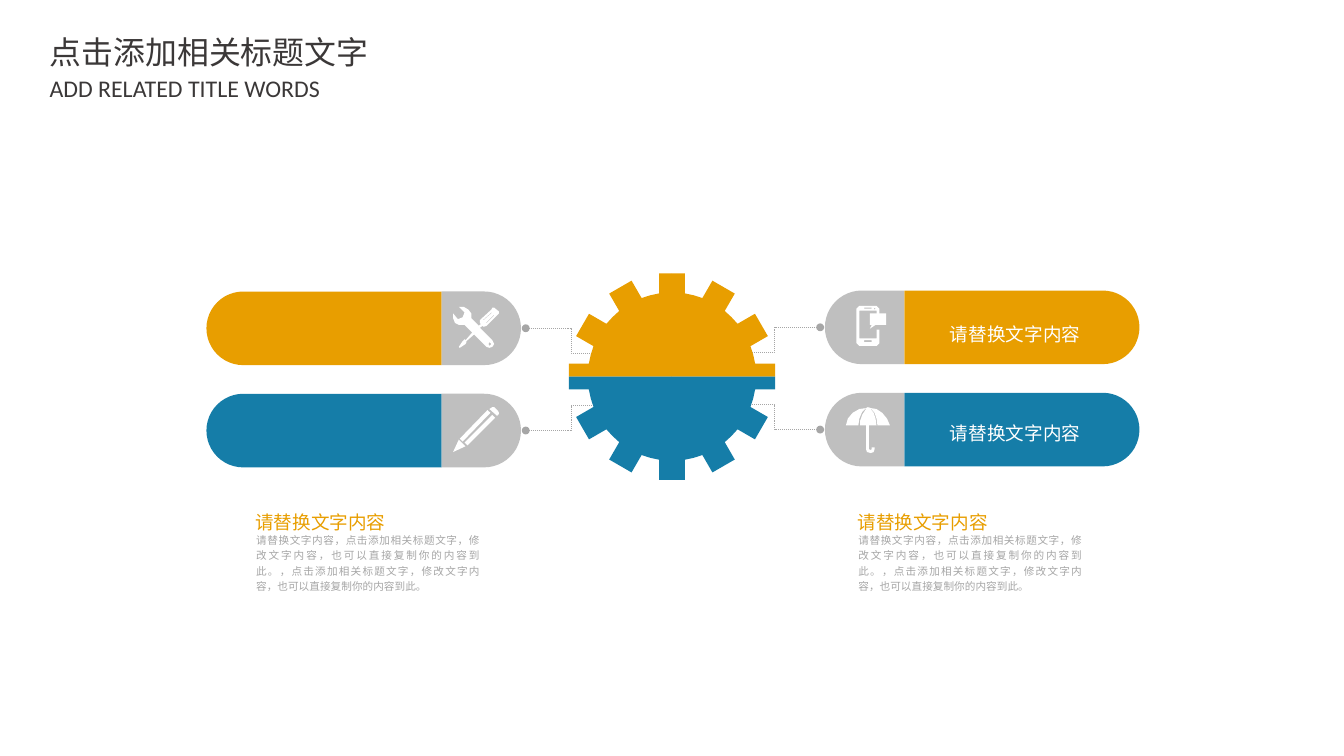
from math import cos, radians, sin

from lxml.etree import SubElement
from pptx import Presentation
from pptx.dml.color import RGBColor
from pptx.enum.dml import MSO_LINE
from pptx.enum.shapes import MSO_CONNECTOR, MSO_SHAPE
from pptx.enum.text import MSO_ANCHOR, MSO_AUTO_SIZE, PP_ALIGN as Align
from pptx.oxml.ns import qn
from pptx.util import Inches, Pt

COLOURS = {"orange": "E89E00", "blue": "157DA8", "cap": "BFBFBF", "grey": "A6A6A6",
           "white": "FFFFFF", "dark": "3B3838"}
CHINESE_FONT = "Noto Sans CJK SC"
HEADING = "请替换文字内容"
BODY = ("请替换文字内容，点击添加相关标题文字，修改文字内容，也可以直接复制你的内容到此。，"
        "点击添加相关标题文字，修改文字内容，也可以直接复制你的内容到此。")
PILL_HEIGHT, BAR_WIDTH, CAP_WIDTH = 0.77, 2.46, 0.83
PILL_STEP = 1.07
GEAR_X, GEAR_Y = 7.03, 3.94

TOOLS = [[
    [(60, 21), (55, 17), (53, 17), (52, 19), (40, 30), (40, 33), (41, 34), (39, 36), (31, 28),
     (31, 23), (28, 19), (23, 16), (18, 16), (24, 22), (22, 27), (17, 29), (12, 23), (12, 28),
     (14, 33), (18, 35), (24, 35), (32, 43), (25, 51), (24, 50), (22, 52), (18, 58), (19, 59),
     (25, 55), (26, 53), (26, 52), (34, 45), (47, 58), (50, 59), (53, 58), (55, 55), (53, 51),
     (40, 38), (43, 36), (44, 37), (47, 36), (58, 25), (60, 23)],
    [(50, 53), (52, 55), (50, 57), (49, 55)],
    [(44, 30), (43, 30), (52, 22), (53, 22)],
    [(47, 33), (46, 33), (55, 24), (55, 25)]]]
PENCIL = [
    [[(18, 48), (12, 61), (25, 55)]],
    [[(48, 17), (19, 47), (22, 50), (51, 20)]],
    [[(53, 22), (24, 51), (27, 54), (56, 25)]],
    [[(50, 16), (53, 14), (55, 14), (57, 16), (59, 18), (60, 20), (60, 21), (58, 23)]]]
PHONE = [
    [[(54, 50), (36, 50), (36, 21), (54, 21), (54, 27), (57, 27), (57, 19), (54, 16), (36, 16),
      (33, 19), (33, 55), (36, 58), (54, 58), (57, 55), (57, 41), (54, 41)],
     [(41, 18), (49, 18), (49, 19), (41, 19)],
     [(52, 18), (53, 19), (52, 20), (51, 19)],
     [(49, 54), (41, 54), (41, 52), (49, 52)]],
    [[(47, 36), (49, 36), (47, 40), (53, 36), (64, 36), (64, 24), (47, 24)]]]
UMBRELLA = [[
    [(55, 34), (68, 34), (65, 27), (60, 21), (54, 17), (48, 16), (45, 15), (43, 16), (36, 17),
     (29, 21), (24, 27), (22, 34), (35, 34), (36, 27), (39, 20), (43, 16), (43, 17), (39, 23),
     (37, 29), (37, 34), (43, 34), (43, 59), (44, 62), (48, 63), (51, 62), (52, 59), (52, 57),
     (49, 57), (49, 59), (48, 60), (46, 59), (46, 34), (54, 34), (53, 27), (51, 21), (48, 17),
     (48, 16), (52, 21), (54, 27)]]]


def paint(shape, colour):
    """Give a shape a plain fill without line or shadow."""
    shape.shadow.inherit = False
    shape.fill.solid()
    shape.fill.fore_color.rgb = RGBColor.from_string(COLOURS[colour])
    shape.line.fill.background()


def add_outline(slide, left, top, contours, colour):
    """Draw closed contours, given in inches from left and top, as one shape."""
    units = [[(round((left + x) * 1000), round((top + y) * 1000)) for x, y in contour]
             for contour in contours]
    builder = slide.shapes.build_freeform(*units[0][0], scale=Inches(1) / 1000)
    for number, contour in enumerate(units):
        if number:
            builder.move_to(*contour[0])
        builder.add_line_segments(contour[1:], close=True)
    paint(builder.convert_to_shape(), colour)


def write(shape, text, size, colour, font, align=Align.LEFT, spacing=1.0, inset=None, wrap=True):
    """Fill a text shape with one formatted paragraph."""
    frame = shape.text_frame
    frame.word_wrap = wrap
    frame.auto_size = MSO_AUTO_SIZE.NONE
    frame.vertical_anchor = MSO_ANCHOR.TOP
    if inset is not None:
        frame.margin_left = frame.margin_right = Inches(inset)
        frame.margin_top = frame.margin_bottom = Inches(inset)
    paragraph = frame.paragraphs[0]
    paragraph.alignment = align
    paragraph.line_spacing = spacing
    paragraph._element.get_or_add_pPr().set("hangingPunct", "0")
    run = paragraph.add_run()
    run.text = text
    run.font.size = Pt(size)
    run.font.name = font
    run.font.color.rgb = RGBColor.from_string(COLOURS[colour])
    SubElement(run.font._element, qn("a:ea"), typeface=CHINESE_FONT)


def add_text(slide, left, top, width, height, *content, **style):
    """Add a text box with one paragraph."""
    box = slide.shapes.add_textbox(Inches(left), Inches(top), Inches(width), Inches(height))
    write(box, *content, **style)


def add_rounded_end(slide, left, top, width, rotation, colour):
    """Add a block whose one end is fully round, turned to the side."""
    offset = (width - PILL_HEIGHT) / 2
    shape = slide.shapes.add_shape(
        MSO_SHAPE.ROUND_2_SAME_RECTANGLE, Inches(left + offset), Inches(top - offset),
        Inches(PILL_HEIGHT), Inches(width))
    shape.adjustments[0], shape.adjustments[1] = 0.5, 0
    shape.rotation = rotation
    paint(shape, colour)


def add_link(slide, cap_edge, middle, toward_gear, down):
    """Add a dotted elbow from the gear to the edge of a pill's cap."""
    end_x = cap_edge + 0.05 * toward_gear
    link = slide.shapes.add_connector(
        MSO_CONNECTOR.ELBOW, Inches(end_x + 0.95 * toward_gear), Inches(middle - 0.26 * down),
        Inches(end_x), Inches(middle))
    link.line.color.rgb = RGBColor.from_string(COLOURS["grey"])
    link.line.width = Pt(0.75)
    link.line.dash_style = MSO_LINE.ROUND_DOT
    line = link.line._get_or_add_ln()
    SubElement(line, qn("a:headEnd"), type="oval")
    SubElement(line, qn("a:tailEnd"), type="oval")
    SubElement(link._element.spPr, qn("a:effectLst"))


def add_pill(slide, left, top, on_right, down, colour, icon):
    """Add a coloured bar with a grey icon cap on the gear's side and its link."""
    cap_left = left if on_right else left + BAR_WIDTH
    bar_left = left + CAP_WIDTH if on_right else left
    cap_edge = left if on_right else left + BAR_WIDTH + CAP_WIDTH
    add_link(slide, cap_edge, top + PILL_HEIGHT / 2, -1 if on_right else 1, down)
    add_rounded_end(slide, bar_left, top, BAR_WIDTH, 90 if on_right else 270, colour)
    add_rounded_end(slide, cap_left, top, CAP_WIDTH, 270 if on_right else 90, "cap")
    for part in icon:
        contours = [[(x / 100, y / 100) for x, y in contour] for contour in part]
        add_outline(slide, cap_left, top, contours, "white")


def add_gear(slide, centre_x, centre_y, tip=1.08, root=0.87, rim=0.88, tooth_width=0.27):
    """Draw a twelve-tooth gear in quarters, orange above and blue below."""
    def point(angle, radius, shift):
        turn = radians(angle)
        return (radius * sin(turn) + shift * cos(turn), radius * cos(turn) - shift * sin(turn))

    half_tooth = tooth_width / 2
    quarter = [(0, 0), (0, tip)]
    for angle in range(0, 91, 30):
        if angle > 0:
            quarter += [point(angle - 15, rim, 0), point(angle, root, -half_tooth),
                        point(angle, tip, -half_tooth)]
        if angle < 90:
            quarter += [point(angle, tip, half_tooth), point(angle, root, half_tooth)]
    quarter.append((tip, 0))
    for vertical, colour in ((-1, "orange"), (1, "blue")):
        for side in (-1, 1):
            mirrored = [(side * x, vertical * y) for x, y in quarter]
            add_outline(slide, centre_x, centre_y, [mirrored], colour)


def add_header(slide, left, top):
    """Place the title and the English line below it."""
    title = slide.shapes.title
    title.left, title.top = Inches(left), Inches(top)
    title.width, title.height = Inches(3.58), Inches(0.51)
    write(title, "点击添加相关标题文字", 24, "dark", CHINESE_FONT, wrap=False)
    add_text(slide, left, top + 0.43, 3.07, 0.41, "ADD RELATED TITLE WORDS", 18, "dark",
             "Calibri", wrap=False)


def add_note(slide, left, top):
    """Add a heading with a justified description below."""
    style = {"align": Align.JUSTIFY, "spacing": 1.2, "inset": 0}
    add_text(slide, left - 0.01, top, 1.93, 0.28, HEADING, 14, "orange", "Arial", **style)
    add_text(slide, left, top + 0.26, 2.34, 0.65, BODY, 8, "grey", "Arial", **style)


def main():
    """Build the gear slide and save it."""
    presentation = Presentation()
    presentation.slide_width, presentation.slide_height = Inches(14.06), Inches(7.91)
    slide = presentation.slides.add_slide(presentation.slide_layouts[5])
    add_header(slide, 0.42, 0.29)
    columns = ((2.16, 3.05, False, (TOOLS, PENCIL)), (8.63, 3.04, True, (PHONE, UMBRELLA)))
    for left, top, on_right, icons in columns:
        for row, (colour, icon) in enumerate(zip(("orange", "blue"), icons)):
            add_pill(slide, left, top + row * PILL_STEP, on_right, 2 * row - 1, colour, icon)
    add_gear(slide, GEAR_X, GEAR_Y)
    for label_top in (3.33, 4.37):
        add_text(slide, 9.81, label_top, 1.62, 0.34, HEADING, 14, "white", CHINESE_FONT,
                 align=Align.CENTER)
    for note_left in (2.68, 8.98):
        add_note(slide, note_left, 5.3)
    presentation.save("out.pptx")


if __name__ == "__main__":
    main()
